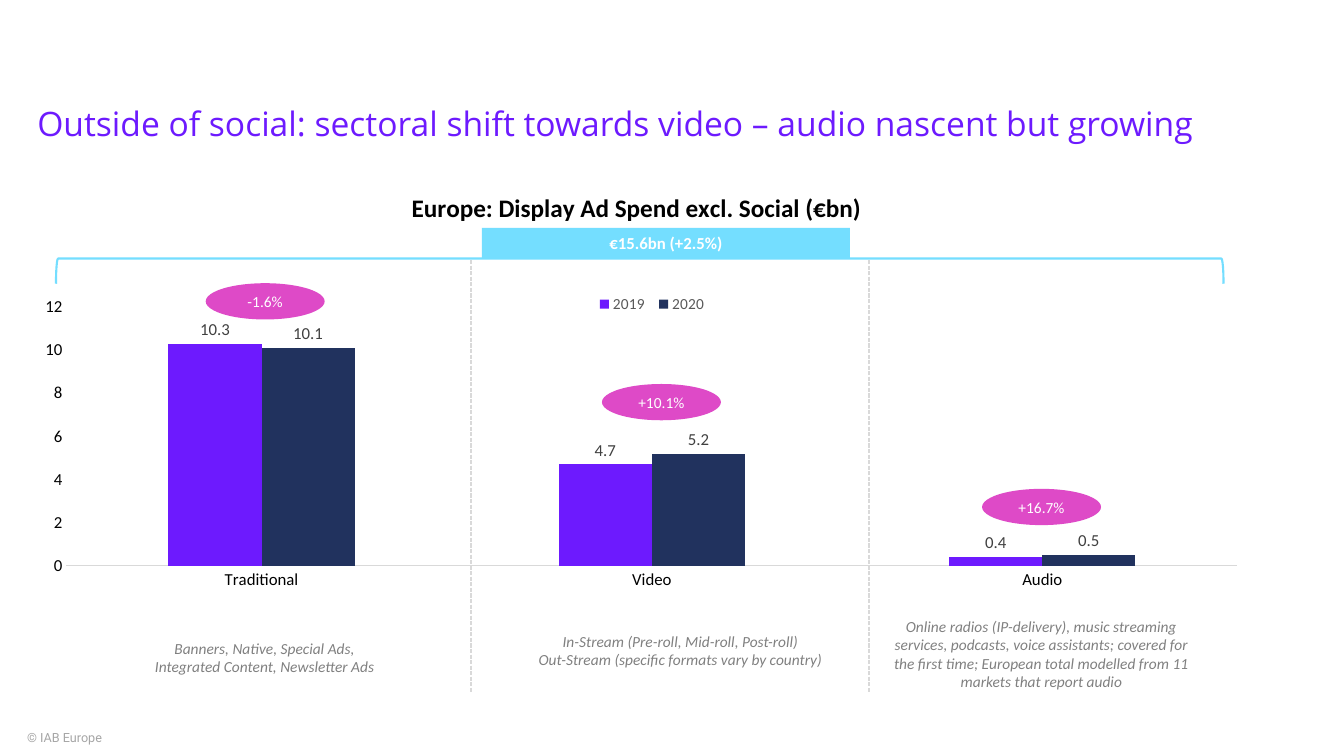
from lxml.etree import SubElement
from pptx import Presentation
from pptx.chart.data import CategoryChartData
from pptx.dml.color import RGBColor
from pptx.enum.chart import XL_CHART_TYPE, XL_LABEL_POSITION, XL_LEGEND_POSITION, XL_TICK_MARK
from pptx.enum.dml import MSO_LINE
from pptx.enum.shapes import MSO_CONNECTOR, MSO_SHAPE
from pptx.enum.text import MSO_ANCHOR, PP_ALIGN
from pptx.oxml import parse_xml
from pptx.oxml.ns import nsdecls, qn
from pptx.util import Inches, Pt

# Content
TITLE = "Outside of social: sectoral shift towards video – audio nascent but growing"
CHART_TITLE = "Europe: Display Ad Spend excl. Social (€bn)"
TOTAL = "€15.6bn (+2.5%)"
COPYRIGHT = "© IAB Europe"
SECTORS = ["Traditional", "Video", "Audio"]
SPEND = {"2019": (10.3, 4.7, 0.4), "2020": (10.1, 5.2, 0.5)}
GROWTH = [("-1.6%", 2.04, 2.81), ("+10.1%", 5.97, 3.81), ("+16.7%", 9.74, 4.85)]
NOTES = [
    (["Banners, Native, Special Ads, Integrated Content, Newsletter Ads"],
     (1.34, 6.29, 2.57, 0.77)),
    (["In-Stream (Pre-roll, Mid-roll, Post-roll)",
      "Out-Stream (specific formats vary by country)"], (5.12, 6.22, 3.26, 0.66)),
    (["Online radios (IP-delivery), music streaming services, podcasts, voice "
      "assistants; covered for the first time; European total modelled from 11 "
      "markets that report audio"], (8.7, 6.07, 3.26, 0.84)),
]
DIVIDERS = [4.67, 8.62]
COLORS = {"violet": "6D1AFE", "navy": "21325E", "pink": "DE4AC7", "sky": "74DEFF",
          "rule": "D9D9D9", "note": "808080", "label": "404040", "legend": "595959",
          "footer": "A6A6A6", "black": "000000", "white": "FFFFFF"}
SERIES_COLORS = ["violet", "navy"]


def rgb(name):
    return RGBColor.from_string(COLORS[name])


def style(font, size, color, name="Calibri", bold=False, italic=False):
    font.size, font.name, font.bold, font.italic = Pt(size), name, bold, italic
    font.color.rgb = rgb(color)


def write(shape, lines, size, color, align=PP_ALIGN.CENTER, **font):
    frame = shape.text_frame
    frame.word_wrap = True
    frame.text = "\n".join(lines)
    for paragraph in frame.paragraphs:
        paragraph.alignment = align
        for run in paragraph.runs:
            style(run.font, size, color, **font)


def add_text(box, lines, size, color, **options):
    write(slide.shapes.add_textbox(*map(Inches, box)), lines, size, color, **options)


def add_filled(kind, box, color):
    shape = slide.shapes.add_shape(kind, *map(Inches, box))
    shape.shadow.inherit = False
    shape.fill.solid()
    shape.fill.fore_color.rgb = rgb(color)
    shape.line.fill.background()
    return shape


def set_layout(parent, index, inner=False, **fractions):
    """Give a chart part a fixed place, in fractions of the chart."""
    for old in parent.findall(qn("c:layout")):
        parent.remove(old)
    layout = parse_xml(f"<c:layout {nsdecls('c')}><c:manualLayout/></c:layout>")
    manual = layout[0]
    if inner:
        SubElement(manual, qn("c:layoutTarget")).set("val", "inner")
    for key in "xy":
        SubElement(manual, qn(f"c:{key}Mode")).set("val", "edge")
    for key, value in fractions.items():
        SubElement(manual, qn(f"c:{key}")).set("val", str(value))
    parent.insert(index, layout)


prs = Presentation()
prs.slide_width, prs.slide_height = Inches(13.33), Inches(7.5)
slide = prs.slides.add_slide(prs.slide_layouts[5])

# Title and copyright line
heading = slide.shapes.title
heading.left, heading.top, heading.width, heading.height = map(
    Inches, (0.27, 0.74, 12.15, 1.01))
write(heading, [TITLE], 24, "violet", align=PP_ALIGN.LEFT, name="Open Sans")
heading.text_frame.vertical_anchor = MSO_ANCHOR.MIDDLE
heading.text_frame.paragraphs[0].line_spacing = 0.9
add_text((0.17, 7.19, 3.61, 0.25), [COPYRIGHT], 9, "footer",
         align=PP_ALIGN.LEFT, name="Roboto")

# Spend chart
spend = CategoryChartData(number_format="#,##0.0")
spend.categories = SECTORS
for year, values in SPEND.items():
    spend.add_series(year, values)
chart = slide.shapes.add_chart(
    XL_CHART_TYPE.COLUMN_CLUSTERED, *map(Inches, (0.27, 1.75, 12.15, 4.61)), spend).chart
style(chart.font, 11, "black")
chart.has_title = True
chart.chart_title.text_frame.text = CHART_TITLE
style(chart.chart_title.text_frame.paragraphs[0].runs[0].font, 18, "black", bold=True)
chart.has_legend = True
chart.legend.position = XL_LEGEND_POSITION.BOTTOM
chart.legend.include_in_layout = False
style(chart.legend.font, 11, "legend")

columns = chart.plots[0]
columns.gap_width, columns.overlap = 219, 0
columns.vary_by_categories = False
for series, color in zip(columns.series, SERIES_COLORS):
    series.format.fill.solid()
    series.format.fill.fore_color.rgb = rgb(color)
    labels = series.data_labels
    labels.show_value = True
    labels.number_format, labels.number_format_is_linked = "#,##0.0", False
    labels.position = XL_LABEL_POSITION.OUTSIDE_END
    style(labels.font, 12, "label")

for axis in (chart.category_axis, chart.value_axis):
    axis.has_major_gridlines = False
    axis.major_tick_mark = axis.minor_tick_mark = XL_TICK_MARK.NONE
    style(axis.tick_labels.font, 12, "black")
chart.category_axis.format.line.color.rgb = rgb("rule")
chart.category_axis.format.line.width = Pt(0.75)
scale = chart.value_axis
scale.minimum_scale, scale.maximum_scale, scale.major_unit = 0, 12, 2
scale.format.line.fill.background()
scale.tick_labels.number_format = "#,##0"
scale.tick_labels.number_format_is_linked = False

root = chart.element
set_layout(root.find(".//" + qn("c:plotArea")), 0, inner=True,
           x=0.032, y=0.281, w=0.956, h=0.557)
set_layout(root.find(".//" + qn("c:title")), 1, x=0.31, y=0.02)
set_layout(root.find(".//" + qn("c:legend")), 1, x=0.46, y=0.24, w=0.1, h=0.07)

# Growth bubbles
for change, left, top in GROWTH:
    bubble = add_filled(MSO_SHAPE.OVAL, (left, top, 1.18, 0.36), "pink")
    write(bubble, [change], 11, "white")

# Sector dividers
for x in DIVIDERS:
    divider = slide.shapes.add_connector(
        MSO_CONNECTOR.STRAIGHT, Inches(x), Inches(2.58), Inches(x), Inches(6.87))
    divider.line.color.rgb = rgb("rule")
    divider.line.width = Pt(1)
    divider.line.dash_style = MSO_LINE.SQUARE_DOT
    SubElement(divider._element.spPr, qn("a:effectLst"))

# Sector notes
for lines, box in NOTES:
    add_text(box, lines, 11, "note", italic=True)

# Bracket over all sectors, with the total
bracket = slide.shapes.add_shape(
    MSO_SHAPE.RIGHT_BRACKET, *map(Inches, (6.22, -3.1, 0.25, 11.58)))
bracket.rotation = 270
bracket.shadow.inherit = False
bracket.fill.background()
bracket.line.color.rgb = rgb("sky")
bracket.line.width = Pt(1.5)
total = add_filled(MSO_SHAPE.RECTANGLE, (4.78, 2.26, 3.65, 0.3), "sky")
write(total, [TOTAL], 12, "white", bold=True)

prs.save("out.pptx")
